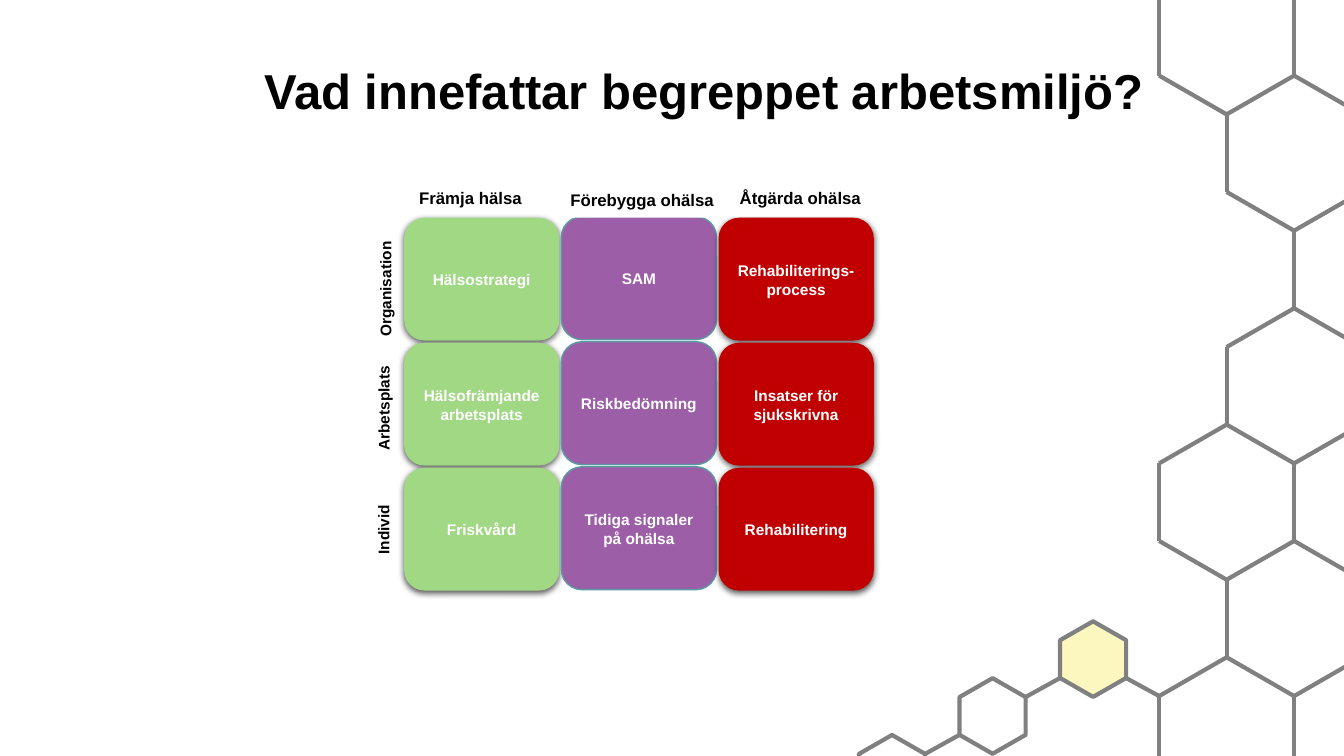
import itertools

import pptx
import pptx.dml.color
import pptx.enum.shapes
import pptx.enum.text
import pptx.oxml
import pptx.oxml.ns
import pptx.util

Pt = pptx.util.Pt
RGBColor = pptx.dml.color.RGBColor
SHAPE = pptx.enum.shapes.MSO_SHAPE
ALIGN = pptx.enum.text.PP_ALIGN
ANCHOR = pptx.enum.text.MSO_ANCHOR

BLACK = RGBColor(0x00, 0x00, 0x00)
WHITE = RGBColor(0xFF, 0xFF, 0xFF)
GREY = RGBColor(0x80, 0x80, 0x80)
YELLOW = RGBColor(0xFB, 0xF7, 0xBF)
GREEN = RGBColor(0xA1, 0xD8, 0x84)
PURPLE = RGBColor(0x9C, 0x5F, 0xA7)
TEAL = RGBColor(0x5C, 0x9A, 0xA3)
RED = RGBColor(0xC0, 0x00, 0x00)

SHADOW = (
    '<a:effectLst %s><a:outerShdw blurRad="57150" dist="19050" dir="5400000" '
    'algn="ctr" rotWithShape="0"><a:srgbClr val="000000"><a:alpha val="63000"/>'
    '</a:srgbClr></a:outerShdw></a:effectLst>' % pptx.oxml.ns.nsdecls("a")
)
NO_EFFECTS = "<a:effectLst %s/>" % pptx.oxml.ns.nsdecls("a")

# Large honeycomb: chains of (column, level) corners
HONEYCOMB = [
    [(0, -1), (0, 0), (1, 1), (2, 0), (2, -1)],
    [(2, 0), (3, 1)],
    [(1, 1), (1, 2), (2, 3), (3, 2)],
    [(2, 3), (2, 4), (3, 5)],
    [(2, 4), (1, 5), (1, 6), (2, 7), (3, 6)],
    [(1, 6), (0, 7), (0, 8), (1, 9), (2, 8), (2, 7)],
    [(2, 8), (3, 9)],
    [(1, 9), (1, 10), (2, 11), (3, 10)],
    [(1, 10), (0, 11), (0, 12)],
    [(2, 11), (2, 12)],
]

# Small hexagons
HEX_WIDTH, HEX_HEIGHT, HEX_SLOPE = 47.2, 54, 13.5

# Matrix columns: fill, outline, vertical shift, texts from top to bottom
CARD_COLUMNS = [
    (GREEN, None, 0, ["Hälsostrategi", "Hälsofrämjande arbetsplats", "Friskvård"]),
    (PURPLE, TEAL, -0.7, ["SAM", "Riskbedömning", "Tidiga signaler på ohälsa"]),
    (RED, None, 0, ["Rehabiliterings-process", "Insatser för sjukskrivna", "Rehabilitering"]),
]
COLUMN_LABELS = [
    ("Främja hälsa", 292.3, 129.6, 95, 23),
    ("Förebygga ohälsa", 400.3, 131, 119.5, 24.5),
    ("Åtgärda ohälsa", 521.3, 129.6, 110.9, 25.2),
]
ROW_LABELS = [
    ("Organisation", 231.8, 195.1, 85),
    ("Arbetsplats", 230.4, 276.5, 85),
    ("Individ", 246.2, 366.5, 53.3),
]


def corner(column, level):
    """Position of a honeycomb corner, in points."""
    return 828 + 48.2 * column, 54 + 83.1 * (level // 2) + 27.7 * (level % 2)


class SlidePainter:
    font = "Arial"
    grid_width = 3

    def __init__(self, page):
        self.page = page

    def line(self, start, end):
        connector = self.page.shapes.add_connector(
            pptx.enum.shapes.MSO_CONNECTOR.STRAIGHT,
            *[Pt(value) for value in (*start, *end)])
        connector.line.color.rgb = GREY
        connector.line.width = Pt(self.grid_width)
        connector._element.spPr.append(pptx.oxml.parse_xml(NO_EFFECTS))

    def hexagon(self, left, top, fill=None):
        middle, right = left + HEX_WIDTH / 2, left + HEX_WIDTH
        upper, lower = top + HEX_SLOPE, top + HEX_HEIGHT - HEX_SLOPE
        points = [(left, lower), (middle, top + HEX_HEIGHT), (right, lower),
                  (right, upper), (middle, top)]
        builder = self.page.shapes.build_freeform(Pt(left), Pt(upper))
        builder.add_line_segments([(Pt(x), Pt(y)) for x, y in points], close=True)
        shape = builder.convert_to_shape()
        shape.shadow.inherit = False
        self.paint(shape, fill, GREY, self.grid_width)

    def paint(self, shape, fill, outline=None, width=1):
        if fill is None:
            shape.fill.background()
        else:
            shape.fill.solid()
            shape.fill.fore_color.rgb = fill
        if outline is None:
            shape.line.fill.background()
        else:
            shape.line.color.rgb = outline
            shape.line.width = Pt(width)

    def set_text(self, shape, text, size, color, spacing=1.07, after=8):
        frame = shape.text_frame
        frame.word_wrap = True
        frame.text = text
        para = frame.paragraphs[0]
        para.line_spacing = spacing
        para.space_after = Pt(after)
        span = para.runs[0]
        span.font.name = self.font
        span.font.size = Pt(size)
        span.font.bold = True
        span.font.color.rgb = color
        return para

    def card(self, text, left, top, fill, outline):
        shape = self.page.shapes.add_shape(
            SHAPE.ROUNDED_RECTANGLE, Pt(left), Pt(top), Pt(110.9), Pt(87.8))
        self.paint(shape, fill, outline)
        shape.shadow.inherit = False
        if outline is None:
            properties = shape._element.spPr
            properties.remove(properties.find(pptx.oxml.ns.qn("a:effectLst")))
            properties.append(pptx.oxml.parse_xml(SHADOW))
        shape.text_frame.vertical_anchor = ANCHOR.MIDDLE
        self.set_text(shape, text, 11, WHITE).alignment = ALIGN.CENTER

    def label(self, text, left, top, width, height, size, rotation=0):
        box = self.page.shapes.add_textbox(Pt(left), Pt(top), Pt(width), Pt(height))
        box.rotation = rotation
        self.paint(box, WHITE)
        self.set_text(box, text, size, BLACK)

    def title(self, text):
        box = self.page.shapes.add_textbox(Pt(171.4), Pt(38.9), Pt(748), Pt(55.4))
        box.text_frame.margin_left = Pt(17.3)
        box.text_frame.vertical_anchor = ANCHOR.MIDDLE
        self.set_text(box, text, 35, BLACK, spacing=0.9, after=0)


def main():
    deck = pptx.Presentation()
    deck.slide_width, deck.slide_height = Pt(960), Pt(540)
    painter = SlidePainter(deck.slides.add_slide(deck.slide_layouts[6]))

    # Honeycomb at the right edge
    for chain in HONEYCOMB:
        for start, end in itertools.pairwise(chain):
            painter.line(corner(*start), corner(*end))

    # Small hexagons climbing towards the honeycomb
    spots = [(613.6 + 71.8 * step, 525 - 40.6 * step) for step in range(3)]
    for (left, top), fill in zip(spots, (None, None, YELLOW)):
        painter.hexagon(left, top, fill)
    for (left, top), (next_left, next_top) in itertools.pairwise(spots):
        painter.line((left + HEX_WIDTH, top + HEX_SLOPE),
                     (next_left, next_top + HEX_HEIGHT - HEX_SLOPE))
    left, top = spots[-1]
    painter.line((left + HEX_WIDTH, top + HEX_HEIGHT - HEX_SLOPE), corner(0, 11))

    painter.title("Vad innefattar begreppet arbetsmiljö?")

    # Matrix of cards
    for column, (fill, outline, shift, texts) in enumerate(CARD_COLUMNS):
        for row, text in enumerate(texts):
            painter.card(text, 288.7 + 112.3 * column, 155.5 + 89.3 * row + shift,
                         fill, outline)

    # Matrix headings
    for text, left, top, width, height in COLUMN_LABELS:
        painter.label(text, left, top, width, height, 12)
    for text, left, top, width in ROW_LABELS:
        painter.label(text, left, top, width, 20.2, 11, rotation=270)

    deck.save("out.pptx")


if __name__ == "__main__":
    main()
